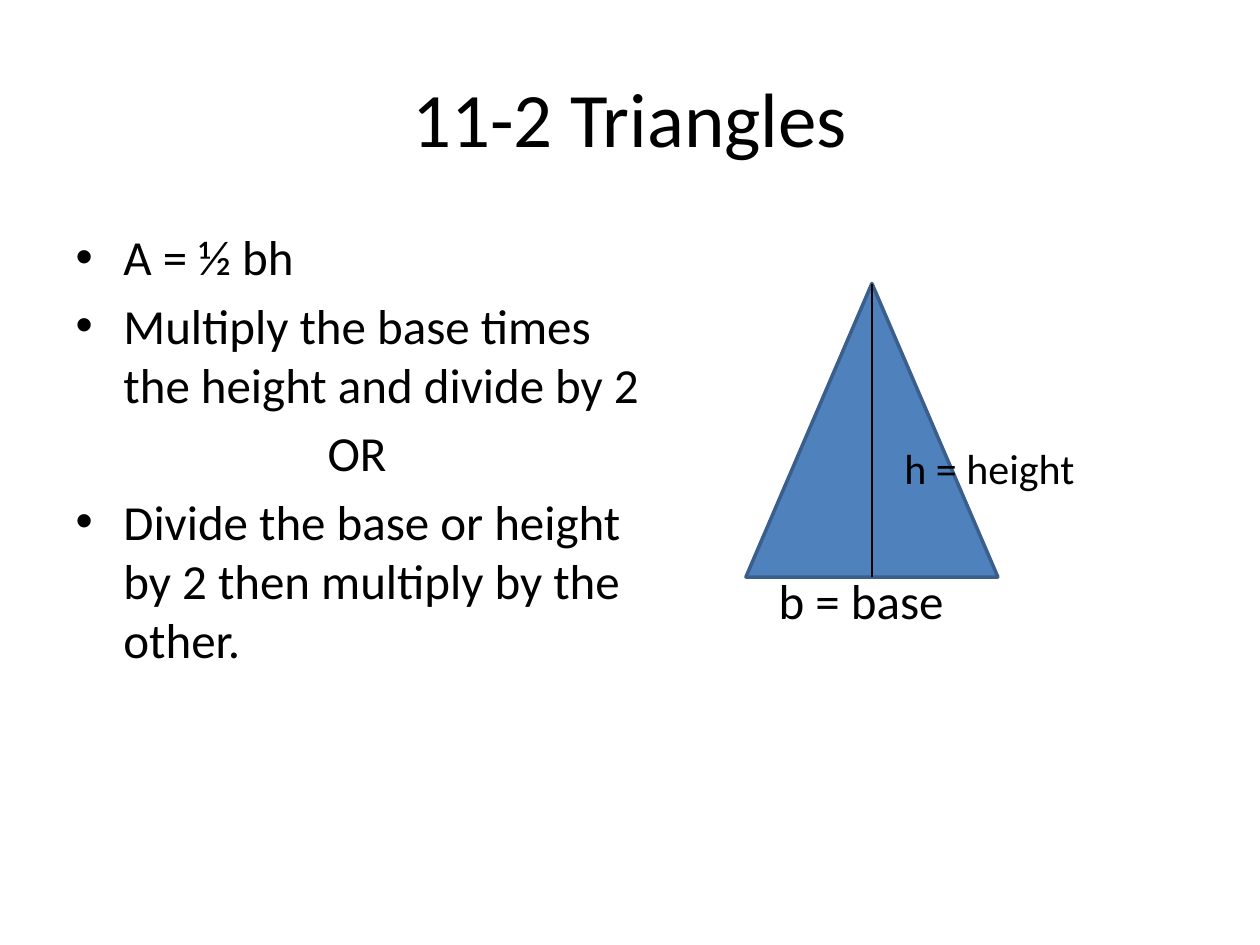
from lxml.etree import SubElement
from pptx import Presentation
from pptx.dml.color import RGBColor
from pptx.enum.shapes import MSO_CONNECTOR, MSO_SHAPE
from pptx.enum.text import MSO_ANCHOR, PP_ALIGN
from pptx.oxml.ns import qn
from pptx.util import Inches, Pt

COLORS = {"text": "000000", "fill": "4F81BD", "edge": "3A5F8C"}
FONT = "Calibri"
TITLE = "11-2 Triangles"
RULES = [
    ("A = ½ bh", True),
    ("Multiply the base times the height and divide by 2", True),
    ("OR", False),
    ("Divide the base or height by 2 then multiply by the other.", True),
]
BASE = "b = base"
HEIGHT = "h = height"
LEFT, TOP, WIDE, TALL = 5.92, 2.25, 2, 2.33


def tint(name):
    return RGBColor.from_string(COLORS[name])


def place(shape, *box):
    shape.left, shape.top, shape.width, shape.height = map(Inches, box)


def write(para, text, size):
    para.text = text
    para.font.name = FONT
    para.font.size = Pt(size)
    para.font.color.rgb = tint("text")


def indent(para, left, first, bullet):
    props = para._p.get_or_add_pPr()
    props.set("marL", str(Inches(left)))
    props.set("indent", str(Inches(first)))
    if bullet:
        SubElement(props, qn("a:buChar")).set("char", "•")
    else:
        SubElement(props, qn("a:buNone"))


deck = Presentation()
deck.slide_width, deck.slide_height = Inches(10), Inches(7.5)
slide = deck.slides.add_slide(deck.slide_layouts[3])
title, body, label = slide.placeholders

place(title, 0.5, 0.3, 9, 1.25)
title.text_frame.vertical_anchor = MSO_ANCHOR.MIDDLE
head = title.text_frame.paragraphs[0]
write(head, TITLE, 44)
head.alignment = PP_ALIGN.CENTER

place(body, 0.5, 1.75, 4.83, 4.95)
frame = body.text_frame
for i, (text, bullet) in enumerate(RULES):
    para = frame.add_paragraph() if i else frame.paragraphs[0]
    if bullet:
        indent(para, 0.38, -0.38, True)
    else:
        indent(para, 2, 0, False)
    write(para, text, 28)

place(label, 6.08, 4.48, 1.84, 0.62)
para = label.text_frame.paragraphs[0]
indent(para, 0, 0, False)
write(para, BASE, 28)

shape = slide.shapes.add_shape(
    MSO_SHAPE.ISOSCELES_TRIANGLE, *map(Inches, (LEFT, TOP, WIDE, TALL))
)
shape.shadow.inherit = False
shape.fill.solid()
shape.fill.fore_color.rgb = tint("fill")
shape.line.color.rgb = tint("edge")
shape.line.width = Pt(2)

mid = LEFT + WIDE / 2
line = slide.shapes.add_connector(
    MSO_CONNECTOR.STRAIGHT, *map(Inches, (mid, TOP, mid, TOP + TALL))
)
line.line.color.rgb = tint("text")
line.line.width = Pt(0.75)
SubElement(line._element.spPr, qn("a:effectLst"))

note = slide.shapes.add_textbox(*map(Inches, (7.08, 3.46, 1.67, 0.5)))
note.text_frame.word_wrap = True
write(note.text_frame.paragraphs[0], HEIGHT, 24)

deck.save("out.pptx")
